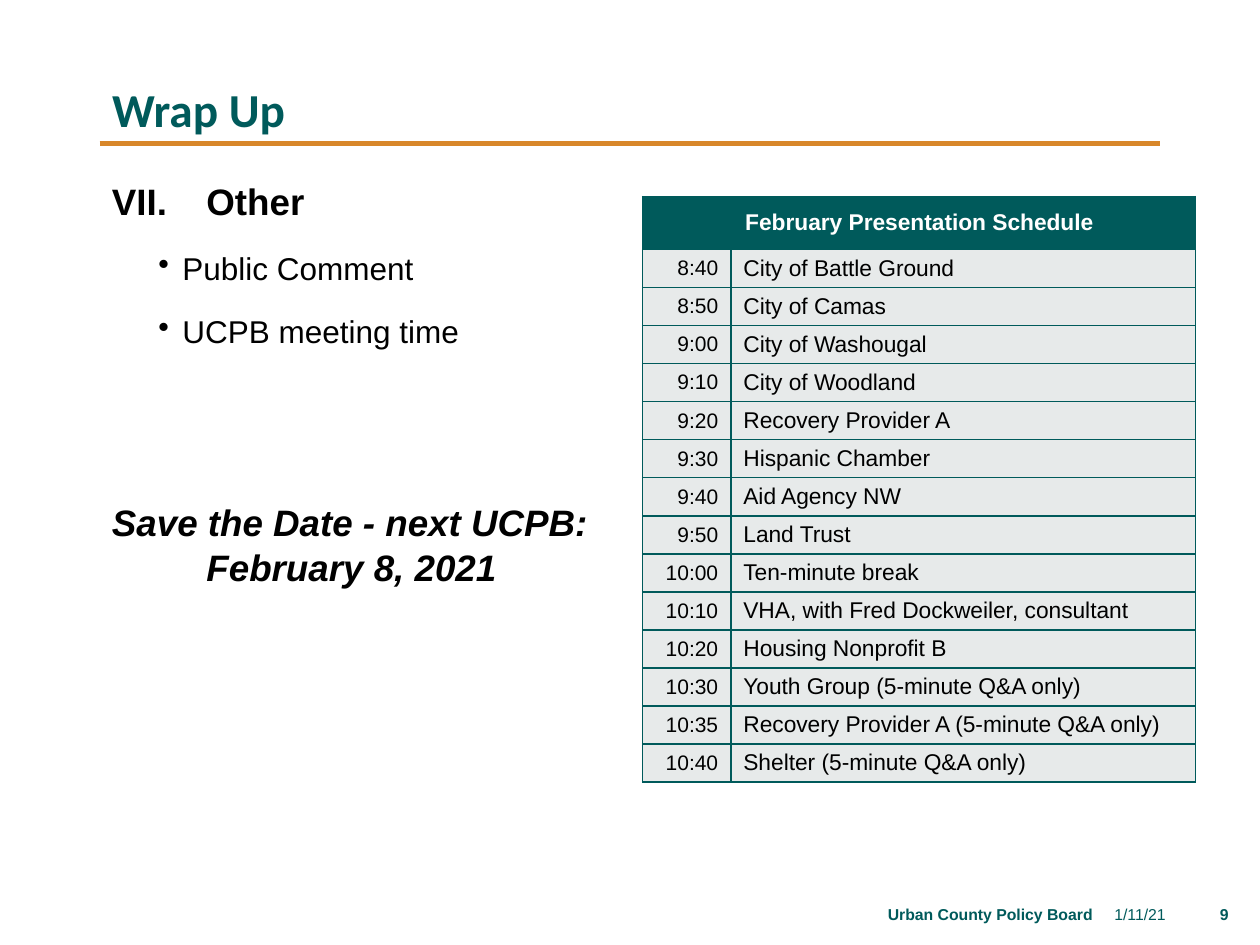
import pptx
import pptx.util
import pptx.dml.color
import pptx.enum.shapes
import pptx.enum.text
import pptx.oxml.ns
from dataclasses import dataclass
from lxml import etree

Inches = pptx.util.Inches
Pt = pptx.util.Pt
Align = pptx.enum.text.PP_ALIGN
Anchor = pptx.enum.text.MSO_ANCHOR
qn = pptx.oxml.ns.qn


@dataclass(frozen=True)
class Theme:
    green: str = "005A5B"
    orange: str = "D8872A"
    pale: str = "E7EAEA"
    black: str = "000000"
    white: str = "FFFFFF"
    heading_font: str = "Calibri"
    body_font: str = "Arial"
    title: float = 27
    section: float = 21
    bullet: float = 18
    table: float = 13
    time: float = 12
    footer: float = 9


THEME = Theme()

SCHEDULE = [
    ("8:40", "City of Battle Ground"),
    ("8:50", "City of Camas"),
    ("9:00", "City of Washougal"),
    ("9:10", "City of Woodland"),
    ("9:20", "Recovery Provider A"),
    ("9:30", "Hispanic Chamber"),
    ("9:40", "Aid Agency NW"),
    ("9:50", "Land Trust"),
    ("10:00", "Ten-minute break"),
    ("10:10", "VHA, with Fred Dockweiler, consultant"),
    ("10:20", "Housing Nonprofit B"),
    ("10:30", "Youth Group (5-minute Q&A only)"),
    ("10:35", "Recovery Provider A (5-minute Q&A only)"),
    ("10:40", "Shelter (5-minute Q&A only)"),
]


def rgb(value):
    return pptx.dml.color.RGBColor.from_string(value)


def style(paragraph, size, color=THEME.black, bold=False, italic=False,
          align=Align.LEFT, name=THEME.body_font):
    paragraph.alignment = align
    font = paragraph.font
    font.name, font.size = name, Pt(size)
    font.bold, font.italic = bold, italic
    font.color.rgb = rgb(color)


def add_text_frame(slide, left, top, width, height, anchor=Anchor.TOP):
    box = slide.shapes.add_textbox(Inches(left), Inches(top), Inches(width), Inches(height))
    frame = box.text_frame
    frame.word_wrap = True
    frame.vertical_anchor = anchor
    return frame


def add_tab_stop(paragraph, position):
    properties = paragraph._p.get_or_add_pPr()
    tabs = etree.SubElement(properties, qn("a:tabLst"))
    etree.SubElement(tabs, qn("a:tab"), pos=str(Inches(position)), algn="l")


def add_bullet(paragraph, left, hanging):
    properties = paragraph._p.get_or_add_pPr()
    properties.set("marL", str(Inches(left)))
    properties.set("indent", str(-Inches(hanging)))
    etree.SubElement(properties, qn("a:buChar"), char="•")


def add_title(slide, left, top, width, height):
    title = slide.shapes.title
    title.left, title.top = Inches(left), Inches(top)
    title.width, title.height = Inches(width), Inches(height)
    title.text_frame.text = "Wrap Up"
    title.text_frame.vertical_anchor = Anchor.BOTTOM
    paragraph = title.text_frame.paragraphs[0]
    paragraph.line_spacing = 0.9
    style(paragraph, THEME.title, THEME.green, bold=True, name=THEME.heading_font)

    # Rule along the bottom of the title
    bottom = Inches(top + height)
    rule = slide.shapes.add_connector(
        pptx.enum.shapes.MSO_CONNECTOR.STRAIGHT,
        Inches(left), bottom, Inches(left + width), bottom)
    rule.line.color.rgb = rgb(THEME.orange)
    rule.line.width = Pt(3)
    etree.SubElement(rule._element.spPr, qn("a:effectLst"))


def add_agenda(slide, left, top, width):
    # Section heading and its topics
    frame = add_text_frame(slide, left, top, width, 1.6)
    heading = frame.paragraphs[0]
    heading.text = "VII.\tOther"
    add_tab_stop(heading, 0.75)
    heading.space_after = Pt(10)
    style(heading, THEME.section, bold=True)
    for topic in ("Public Comment", "UCPB meeting time"):
        paragraph = frame.add_paragraph()
        paragraph.text = topic
        add_bullet(paragraph, 0.56, 0.19)
        paragraph.space_before, paragraph.space_after = Pt(3.8), Pt(10)
        style(paragraph, THEME.bullet)

    # Next meeting
    frame = add_text_frame(slide, left, top + 2.54, width, 0.8)
    for index, line in enumerate(("Save the Date - next UCPB:", "\tFebruary 8, 2021")):
        paragraph = frame.add_paragraph() if index else frame.paragraphs[0]
        paragraph.text = line
        add_tab_stop(paragraph, 0.75)
        style(paragraph, THEME.section, bold=True, italic=True)
    for shape in slide.shapes:
        if shape.has_text_frame and not shape.is_placeholder:
            for paragraph in shape.text_frame.paragraphs:
                paragraph.line_spacing = 1.04


def format_cell(cell, text, fill, size, **options):
    cell.text = text
    cell.fill.solid()
    cell.fill.fore_color.rgb = rgb(fill)
    cell.vertical_anchor = Anchor.MIDDLE
    cell.margin_top = cell.margin_bottom = Inches(0.03)
    style(cell.text_frame.paragraphs[0], size, **options)


def add_borders(cell):
    properties = cell._tc.get_or_add_tcPr()
    for index, side in enumerate(("lnL", "lnR", "lnT", "lnB")):
        line = etree.Element(qn("a:" + side), w=str(Pt(1)))
        fill = etree.SubElement(line, qn("a:solidFill"))
        etree.SubElement(fill, qn("a:srgbClr"), val=THEME.green)
        properties.insert(index, line)


def add_schedule(slide, left, top, width, height):
    frame = slide.shapes.add_table(
        len(SCHEDULE) + 1, 2, Inches(left), Inches(top), Inches(width), Inches(height))
    table = frame.table
    time_width, header_height = 0.7, 0.42
    table.columns[0].width = Inches(time_width)
    table.columns[1].width = Inches(width - time_width)
    for row in table.rows:
        row.height = Inches((height - header_height) / len(SCHEDULE))
    table.rows[0].height = Inches(header_height)

    table.cell(0, 0).merge(table.cell(0, 1))
    format_cell(table.cell(0, 0), "February Presentation Schedule", THEME.green,
                THEME.table, color=THEME.white, bold=True, align=Align.CENTER)
    for row, (time, presenter) in enumerate(SCHEDULE, start=1):
        format_cell(table.cell(row, 0), time, THEME.pale, THEME.time, align=Align.RIGHT)
        format_cell(table.cell(row, 1), presenter, THEME.pale, THEME.table)
    for cell in table.iter_cells():
        add_borders(cell)


def add_footer(slide, top, height):
    parts = [
        ("Urban County Policy Board", 2.5, 6.27, True),
        ("1/11/21", 8.56, 0.79, False),
        ("9", 9.38, 0.47, True),
    ]
    for text, left, width, bold in parts:
        frame = add_text_frame(slide, left, top, width, height, Anchor.MIDDLE)
        frame.text = text
        style(frame.paragraphs[0], THEME.footer, THEME.green, bold=bold, align=Align.RIGHT)


def main():
    presentation = pptx.Presentation()
    presentation.slide_width, presentation.slide_height = Inches(10), Inches(7.5)
    slide = presentation.slides.add_slide(presentation.slide_layouts[5])
    add_title(slide, 0.79, 0.4, 8.42, 0.74)
    add_agenda(slide, 0.79, 1.36, 4.2)
    add_schedule(slide, 5.1, 1.56, 4.39, 4.65)
    add_footer(slide, 7.06, 0.4)
    presentation.save("out.pptx")


if __name__ == "__main__":
    main()
